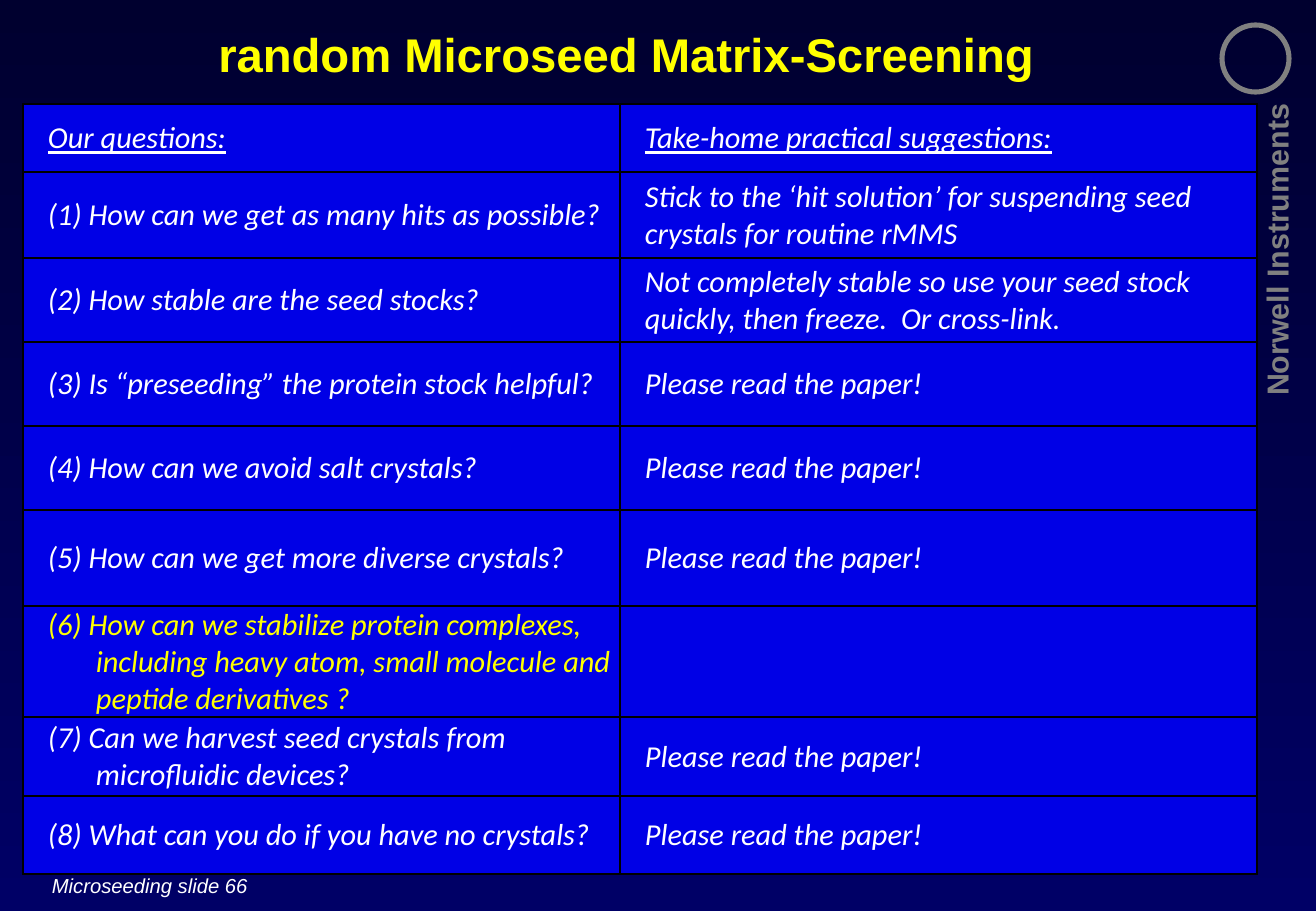
from lxml.etree import SubElement
from pptx import Presentation
from pptx.dml.color import RGBColor
from pptx.enum.shapes import MSO_SHAPE as Shape
from pptx.enum.text import MSO_ANCHOR as Anchor, MSO_AUTO_SIZE as AutoSize, PP_ALIGN as Align
from pptx.oxml import parse_xml
from pptx.oxml.ns import nsdecls, qn
from pptx.util import Pt

EMU_PER_PX = 7526
SLIDE_SIZE = 1316, 911

NIGHT = RGBColor(0x00, 0x00, 0x2F)
NAVY = RGBColor(0x00, 0x00, 0x66)
BLUE = RGBColor(0x00, 0x00, 0xE6)
BLACK = RGBColor(0x00, 0x00, 0x00)
WHITE = RGBColor(0xFF, 0xFF, 0xFF)
YELLOW = RGBColor(0xFF, 0xFF, 0x00)
GREY = RGBColor(0x80, 0x80, 0x80)

READ_PAPER = "Please read the paper!"
HIGHLIGHTED_ROW = 6
ROWS = [
    # height, question, suggestion
    (68, "Our questions:", "Take-home practical suggestions:"),
    (86, "(1) How can we get as many hits as possible?",
     "Stick to the ‘hit solution’ for suspending seed crystals for routine rMMS"),
    (84, "(2) How stable are the seed stocks?",
     "Not completely stable so use your seed stock quickly, then freeze.  Or cross-link."),
    (84, "(3) Is “preseeding” the protein stock helpful?", READ_PAPER),
    (84, "(4) How can we avoid salt crystals?", READ_PAPER),
    (96, "(5) How can we get more diverse crystals?", READ_PAPER),
    (111, "(6) How can we stabilize protein complexes, including heavy atom, "
          "small molecule and peptide derivatives ?", ""),
    (79, "(7) Can we harvest seed crystals from microfluidic devices?", READ_PAPER),
    (78, "(8) What can you do if you have no crystals?", READ_PAPER),
]
COLUMN_WIDTHS = 597, 637


def px(*lengths):
    return [length * EMU_PER_PX for length in lengths]


def write_text(frame, text, size=18, font="Arial", color=WHITE, bold=False, italic=False,
               underline=False, align=Align.LEFT, indent=0, hanging=0):
    paragraph = frame.paragraphs[0]
    paragraph.alignment = align
    margin, first_line = px(indent + hanging, -hanging)
    properties = paragraph._p.get_or_add_pPr()
    properties.set("marL", str(margin))
    properties.set("indent", str(first_line))
    run = paragraph.add_run()
    run.text = text
    run.font.size = Pt(size)
    run.font.name = font
    run.font.color.rgb = color
    run.font.bold = bold
    run.font.italic = italic
    run.font.underline = underline


class SlideBuilder:
    def __init__(self, presentation):
        title_only = presentation.slide_layouts[5]
        self.slide = presentation.slides.add_slide(title_only)
        self.shapes = self.slide.shapes

    def background(self, top, bottom):
        fill = self.slide.background.fill
        fill.gradient()
        fill.gradient_angle = 270
        for stop, color in zip(fill.gradient_stops, (top, bottom)):
            stop.color.rgb = color
        fill.gradient_stops[0].position = 0
        fill.gradient_stops[1].position = 1

    def title(self, text, *box, **style):
        title = self.shapes.title
        title.left, title.top, title.width, title.height = px(*box)
        frame = title.text_frame
        frame.auto_size = AutoSize.NONE
        frame.word_wrap = True
        frame.vertical_anchor = Anchor.TOP
        write_text(frame, text, **style)

    def label(self, text, *box, rotation=0, anchor=Anchor.TOP, wrap=True, **style):
        label = self.shapes.add_textbox(*px(*box))
        label.rotation = rotation
        label.text_frame.word_wrap = wrap
        label.text_frame.vertical_anchor = anchor
        write_text(label.text_frame, text, **style)

    def ring(self, *box, color, weight):
        ring = self.shapes.add_shape(Shape.OVAL, *px(*box))
        ring.shadow.inherit = False
        ring.fill.background()
        ring.line.color.rgb = color
        ring.line.width = Pt(weight)

    def cell(self, cell, text, **style):
        cell.fill.solid()
        cell.fill.fore_color.rgb = BLUE
        cell.vertical_anchor = Anchor.MIDDLE
        cell.margin_left, cell.margin_top, cell.margin_right, cell.margin_bottom = px(1, 1, 1, 0)
        properties = cell._tc.get_or_add_tcPr()
        for position, side in enumerate(("lnL", "lnR", "lnT", "lnB")):
            border = parse_xml(f'<a:{side} {nsdecls("a")} w="{Pt(1)}"/>')
            fill = SubElement(border, qn("a:solidFill"))
            SubElement(fill, qn("a:srgbClr"), val=str(BLACK))
            properties.insert(position, border)
        if text:
            write_text(cell.text_frame, text, font="Calibri", italic=True, indent=24, **style)

    def question_table(self, left, top):
        width, height = sum(COLUMN_WIDTHS), sum(row[0] for row in ROWS)
        table = self.shapes.add_table(len(ROWS), 2, *px(left, top, width, height)).table
        table.first_row = table.horz_banding = False
        for column, column_width in zip(table.columns, px(*COLUMN_WIDTHS)):
            column.width = column_width
        for index, (row_height, question, suggestion) in enumerate(ROWS):
            table.rows[index].height = px(row_height)[0]
            is_header = index == 0
            color = YELLOW if index == HIGHLIGHTED_ROW else WHITE
            self.cell(table.cell(index, 0), question, color=color,
                      underline=is_header, hanging=48)
            self.cell(table.cell(index, 1), suggestion, underline=is_header)


def main():
    presentation = Presentation()
    presentation.slide_width, presentation.slide_height = px(*SLIDE_SIZE)
    builder = SlideBuilder(presentation)
    builder.background(NIGHT, NAVY)

    # Company strip and footer
    builder.label("Norwell Instruments", 1094, 250, 365, 49, rotation=270,
                  anchor=Anchor.MIDDLE, color=GREY, bold=True, align=Align.RIGHT)
    builder.ring(1222, 25, 67, 67, color=GREY, weight=3)
    builder.label("Microseeding slide 66", 40, 867, 221, 36, wrap=False, size=12, italic=True)

    # Title and table of questions
    builder.title("random Microseed Matrix-Screening", -32, 19, 1316, 69,
                  size=28, color=YELLOW, bold=True, align=Align.CENTER)
    builder.question_table(23, 104)

    presentation.save("out.pptx")


if __name__ == "__main__":
    main()
